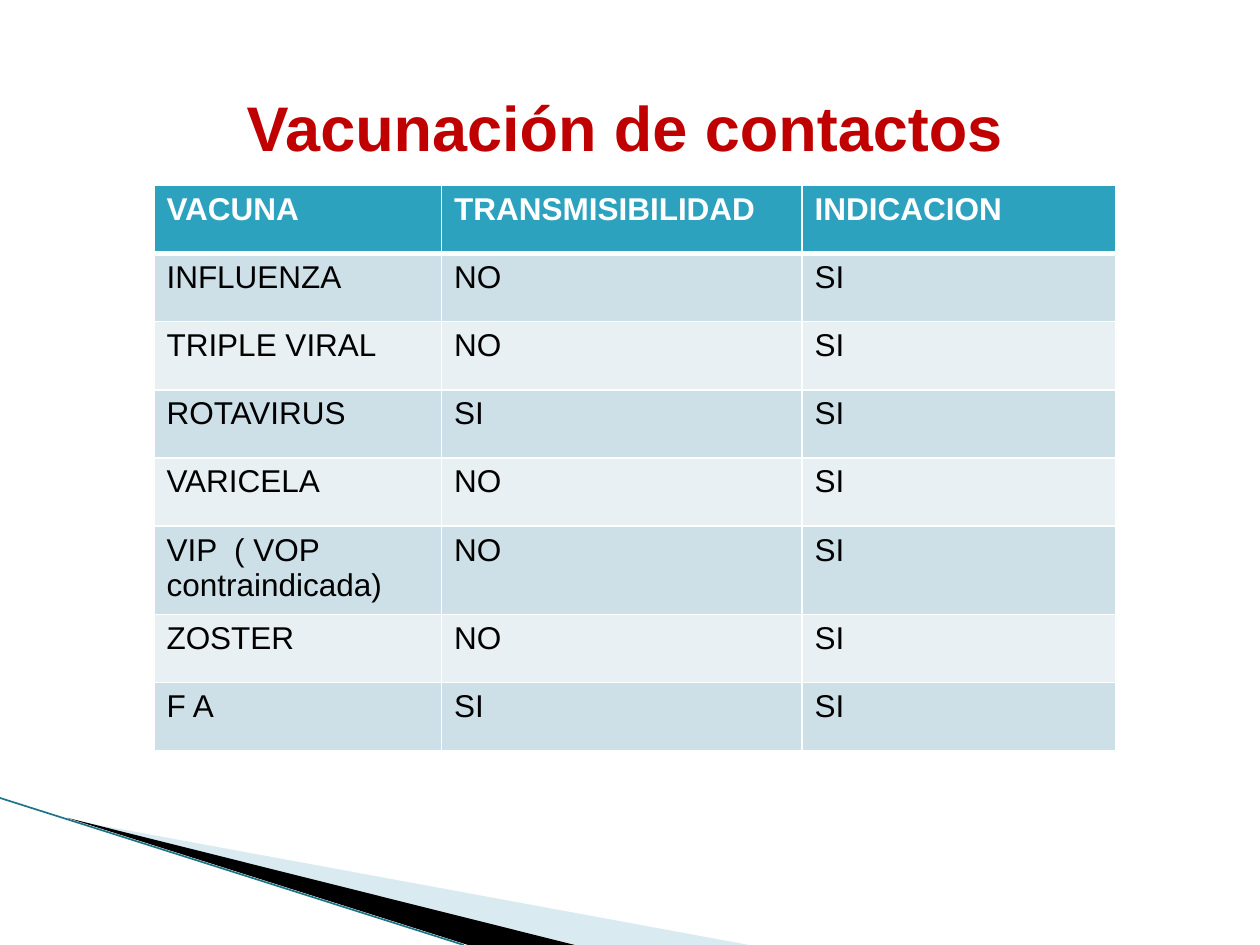
from lxml import etree
from pptx import Presentation
from pptx.dml.color import RGBColor
from pptx.enum import shapes, text
from pptx.oxml import ns
from pptx.util import Pt

# Content
TITLE = "Vacunación de contactos"
ROWS = [
    ("VACUNA", "TRANSMISIBILIDAD", "INDICACION"),
    ("INFLUENZA", "NO", "SI"),
    ("TRIPLE VIRAL", "NO", "SI"),
    ("ROTAVIRUS", "SI", "SI"),
    ("VARICELA", "NO", "SI"),
    ("VIP  ( VOP contraindicada)", "NO", "SI"),
    ("ZOSTER", "NO", "SI"),
    ("F A", "SI", "SI"),
]
COL_WIDTHS = (164.4, 206, 179.4)
ROW_HEIGHT = 39

THEME = {
    "font": "Arial", "title_size": 36, "cell_size": 18,
    "title": "C00000", "head_text": "FFFFFF", "text": "000000",
    "head": "2DA2BF", "bands": ("CDE0E8", "E8F0F4"), "border": "FFFFFF",
    "wedge": "A0CBDC", "shade": "000000", "edge": "1B7587",
}

# Corner wedges: points, colour, opacity in percent
WEDGES = [
    ([(39.6, 468.4), (428, 540), (328, 540)], THEME["wedge"], 40),
    ([(38.2, 467.3), (328.5, 540), (267.5, 540)], THEME["shade"], 100),
]
EDGE = (0, 456, 265, 540)


def rgb(value):
    return RGBColor.from_string(value)


def write(tf, words, size, color, bold, align):
    p = tf.paragraphs[0]
    p.alignment = align
    r = p.add_run()
    r.text = words
    style = {"name": THEME["font"], "size": Pt(size), "bold": bold}
    for key, value in style.items():
        setattr(r.font, key, value)
    r.font.color.rgb = rgb(color)


def add_wedge(s, points, color, opacity):
    pts = [(Pt(x), Pt(y)) for x, y in points]
    fb = s.shapes.build_freeform(*pts[0])
    fb.add_line_segments(pts[1:], close=True)
    sp = fb.convert_to_shape()
    sp.shadow.inherit = False
    sp.fill.solid()
    sp.fill.fore_color.rgb = rgb(color)
    sp.line.fill.background()
    if opacity < 100:
        clr = sp._element.spPr.find(".//" + ns.qn("a:srgbClr"))
        etree.SubElement(clr, ns.qn("a:alpha"), val=str(opacity * 1000))


def set_borders(cell, widths):
    tcPr = cell._tc.get_or_add_tcPr()
    for i, (side, width) in enumerate(widths.items()):
        ln = etree.Element(ns.qn("a:ln" + side), w=str(Pt(width)))
        fill = etree.SubElement(ln, ns.qn("a:solidFill"))
        etree.SubElement(fill, ns.qn("a:srgbClr"), val=THEME["border"])
        tcPr.insert(i, ln)


prs = Presentation()
prs.slide_width, prs.slide_height = Pt(720), Pt(540)
s = prs.slides.add_slide(prs.slide_layouts[6])

# Corner decoration
for wedge in WEDGES:
    add_wedge(s, *wedge)
edge = s.shapes.add_connector(shapes.MSO_CONNECTOR.STRAIGHT, *map(Pt, EDGE))
edge.line.color.rgb = rgb(THEME["edge"])
edge.line.width = Pt(0.95)
etree.SubElement(edge._element.spPr, ns.qn("a:effectLst"))

# Title
tf = s.shapes.add_textbox(Pt(36), Pt(21.6), Pt(648), Pt(90)).text_frame
frame = {"word_wrap": True, "vertical_anchor": text.MSO_ANCHOR.MIDDLE,
         "margin_top": Pt(14.6), "margin_right": Pt(13)}
for key, value in frame.items():
    setattr(tf, key, value)
write(tf, TITLE, THEME["title_size"], THEME["title"], True, text.PP_ALIGN.CENTER)

# Table
table = s.shapes.add_table(len(ROWS), len(COL_WIDTHS), Pt(88), Pt(105.8),
                           Pt(sum(COL_WIDTHS)), Pt(ROW_HEIGHT * len(ROWS))).table
for column, width in zip(table.columns, COL_WIDTHS):
    column.width = Pt(width)
for i, row in enumerate(ROWS):
    table.rows[i].height = Pt(ROW_HEIGHT)
    head = i == 0
    for j, words in enumerate(row):
        cell = table.cell(i, j)
        cell.fill.solid()
        cell.fill.fore_color.rgb = rgb(THEME["head"] if head else THEME["bands"][(i - 1) % 2])
        set_borders(cell, {"L": 1, "R": 1, "T": 3 if i == 1 else 1, "B": 3 if head else 1})
        write(cell.text_frame, words, THEME["cell_size"],
              THEME["head_text" if head else "text"], head, text.PP_ALIGN.LEFT)

prs.save("out.pptx")
